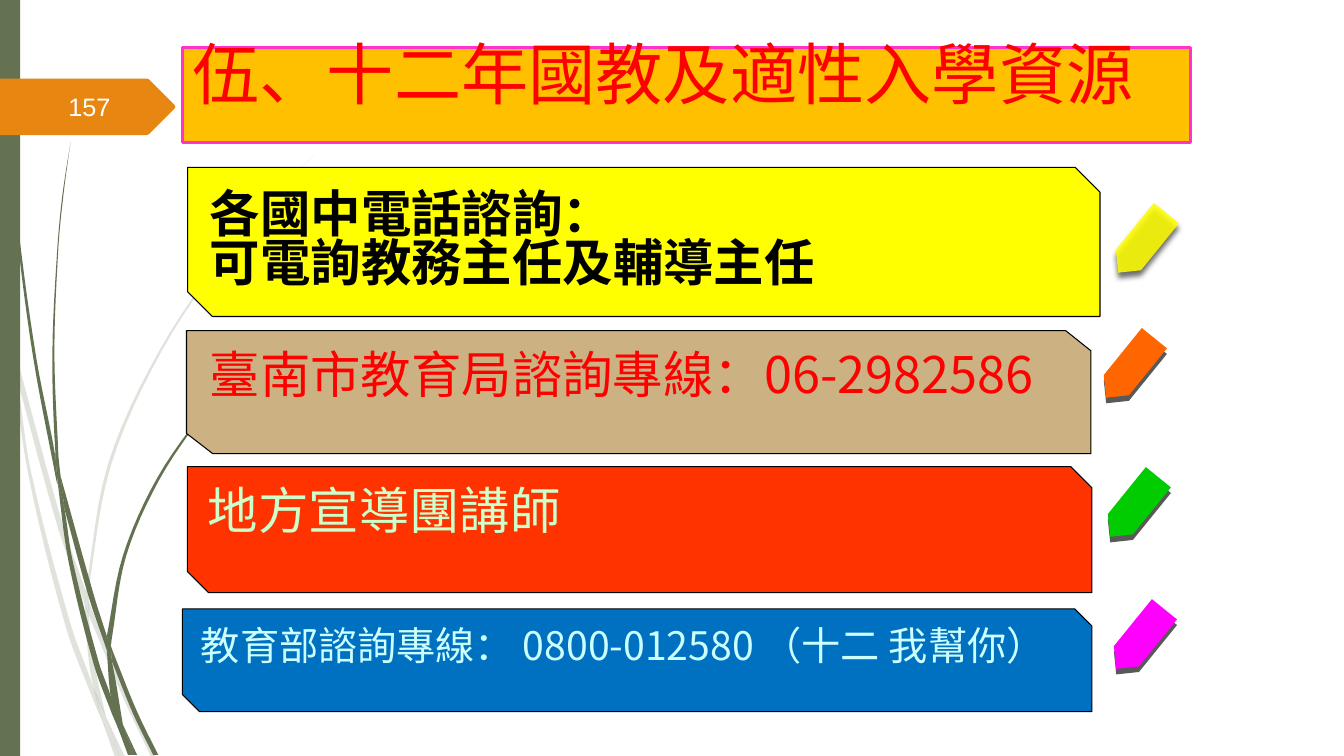
from dataclasses import dataclass
from math import dist

from lxml.etree import SubElement as Sub
from pptx import Presentation
from pptx.dml.color import RGBColor as Rgb
from pptx.enum.shapes import MSO_SHAPE as Kind
from pptx.enum.text import MSO_ANCHOR as Anchor, MSO_AUTO_SIZE as Auto, PP_ALIGN as Align
from pptx.oxml.ns import qn
from pptx.shapes.autoshape import Shape
from pptx.slide import Slide
from pptx.util import Inches, Pt

Point = tuple[float, float]
FONT = "Noto Sans CJK SC"
GREEN = "647252"
STEPS = 6


@dataclass
class Wisp:
    down: list[Point]
    up: list[Point]


@dataclass
class Bar:
    left: float
    top: float
    width: float
    height: float
    fill: str
    lines: list[str]
    color: str
    size: int = 36
    bold: bool = False


@dataclass
class Pen:
    left: float
    top: float
    fill: str
    alpha: int = 100
    blur: int = 0


PALE = [
    Wisp([(0, 2.82), (.08, 3.22), (.11, 3.5)], [(.1, 3.44), (0, 2.99)]),
    Wisp([(.14, 3.45), (.62, 5.2), (.85, 5.86)], [(.84, 5.99), (.57, 5.22), (.17, 3.76)]),
    Wisp([(.88, 5.96), (.92, 6.07), (1.27, 6.92), (1.55, 7.51)],
         [(1.5, 7.51), (1.23, 6.94), (.88, 6.1)]),
    Wisp([(1.05, 7.11), (1.24, 7.51)], [(1.19, 7.51)]),
    Wisp([(.11, 3.5), (.17, 3.76), (.31, 4.69), (.7, 6.19), (.93, 6.83), (1.01, 7.14)],
         [(1.01, 7.14), (.92, 6.93), (.65, 6.21), (.28, 4.7), (.11, 3.5)]),
    Wisp([(.84, 5.99), (.88, 6.1), (.91, 6.46), (1.05, 7.11)],
         [(1.05, 7.11), (.93, 6.83), (.87, 6.46), (.84, 5.99)]),
    Wisp([(3.12, 1.53), (2.68, 1.97), (2.28, 2.44), (1.58, 3.48), (1.07, 4.61), (.85, 5.86)],
         [(.88, 5.96), (.88, 5.84), (1.1, 4.62), (1.6, 3.49), (2.29, 2.45), (2.68, 1.98),
          (3.12, 1.53)]),
    Wisp([(1.01, 7.14), (1.14, 7.51)], [(1.19, 7.51)]),
    Wisp([(.85, 5.86), (.88, 5.96), (.88, 6.1)], [(.84, 5.99)]),
    Wisp([(.93, 6.83), (1.05, 7.11), (1.19, 7.51)], [(1.01, 7.14), (.99, 7.07), (.93, 6.83)]),
]
DARK = [
    Wisp([(.03, 0), (.05, .48), (.08, 1.09), (.19, 2.32), (.36, 3.55), (.55, 4.53), (.57, 4.81)],
         [(.56, 4.77), (.33, 3.55), (.17, 2.33), (.07, 1.1), (.03, .48), (.03, 0)]),
    Wisp([(.6, 4.72), (.93, 5.9), (1.06, 6.31)], [(1.06, 6.45), (.88, 5.92), (.64, 5.05)]),
    Wisp([(1.1, 6.41), (1.13, 6.49), (1.36, 7.06), (1.57, 7.49)],
         [(1.52, 7.49), (1.32, 7.08), (1.11, 6.56)]),
    Wisp([(.57, 4.77), (.64, 5.05), (.72, 5.56), (.98, 6.57), (1.1, 6.91), (1.17, 7.22)],
         [(1.11, 7.08), (.93, 6.59), (.68, 5.57), (.57, 4.77)]),
    Wisp([(.7, 1.41), (.62, 1.93), (.57, 2.45), (.52, 3.49), (.55, 4.49), (.6, 4.72)],
         [(.58, 4.53), (.54, 3.49), (.58, 2.45), (.63, 1.93), (.7, 1.41)]),
    Wisp([(1.22, 7.19), (1.36, 7.49)], [(1.33, 7.49)]),
    Wisp([(.55, 4.49), (.6, 4.72), (.64, 5.05)], [(.57, 4.77), (.55, 4.53)]),
    Wisp([(2.6, 3.44), (2.31, 3.73), (2.04, 4.05), (1.56, 4.74), (1.22, 5.51), (1.06, 6.31)],
         [(1.1, 6.41), (1.11, 6.33), (1.25, 5.52), (1.58, 4.76), (2.05, 4.06), (2.31, 3.74),
          (2.61, 3.44)]),
    Wisp([(1.17, 7.22), (1.31, 7.49)], [(1.27, 7.49)]),
    Wisp([(1.06, 6.45), (1.11, 6.56), (1.22, 7.19)], [(1.16, 7.06), (1.1, 6.92), (1.06, 6.45)]),
    Wisp([(1.06, 6.31), (1.1, 6.41), (1.11, 6.56)], [(1.06, 6.45)]),
    Wisp([(1.1, 6.91), (1.22, 7.19), (1.33, 7.49)], [(1.31, 7.49), (1.17, 7.22), (1.1, 6.91)]),
]
TAG = [(0, .78), (1.46, .78), (1.48, .79), (1.73, 1.04), (1.74, 1.06), (1.73, 1.08),
       (1.48, 1.33), (1.46, 1.34), (0, 1.34)]
TAN = [(1.85, 3.28), (10.57, 3.28), (10.82, 3.48), (10.82, 4.5), (2.11, 4.5), (1.85, 4.3)]
BARS = [
    Bar(1.81, 6.04, 9.02, 1.02, "0070C0", ["教育部諮詢專線： 0800-012580 （十二 我幫你）"], "CCFFFF", 28),
    Bar(1.86, 4.63, 8.97, 1.25, "FF3300", ["地方宣導團講師"], "CCFFCC"),
    Bar(1.86, 1.66, 9.05, 1.48, "FFFF00", ["各國中電話諮詢：", "可電詢教務主任及輔導主任"],
        "000000", bold=True),
]
LOCAL = Bar(1.85, 3.28, 8.98, 1.22, "CCB182", ["臺南市教育局諮詢專線：06-2982586"], "FF0000")
PENS = [Pen(10.95, 2.25, "FFFF00", 86, 4), Pen(10.87, 4.87, "00CC00"),
        Pen(10.93, 6.18, "FF00FF"), Pen(10.83, 3.49, "FF6600")]


def paint(shape: Shape, fill: str, line: str = "", width: float = .75, alpha: int = 100) -> None:
    shape.shadow.inherit = False
    shape.fill.solid()
    shape.fill.fore_color.rgb = Rgb.from_string(fill)
    if alpha < 100:
        tint = shape._element.spPr.find(qn("a:solidFill")).find(qn("a:srgbClr"))
        Sub(tint, qn("a:alpha"), val=str(alpha * 1000))
    if line:
        shape.line.color.rgb = Rgb.from_string(line)
        shape.line.width = Pt(width)
    else:
        shape.line.fill.background()


def write(shape: Shape, lines: list[str], size: int, color: str, face: str = FONT,
          bold: bool = False) -> None:
    frame = shape.text_frame
    frame.text = "\n".join(lines)
    frame.word_wrap = True
    frame.auto_size = Auto.NONE
    for para in frame.paragraphs:
        para.alignment = Align.LEFT
        for run in para.runs:
            run.font.size, run.font.bold, run.font.name = Pt(size), bold, face
            run.font.color.rgb = Rgb.from_string(color)
            Sub(run.font._element, qn("a:ea"), typeface=face)


def smooth(side: list[Point]) -> list[Point]:
    """Sample a Hermite curve that runs through the points of one side."""
    last = len(side) - 1
    slopes = []
    for i in range(last + 1):
        a, b, c = side[max(i - 1, 0)], side[i], side[min(i + 1, last)]
        span = dist(a, b) + dist(b, c) or 1
        slopes.append(((c[0] - a[0]) / span, (c[1] - a[1]) / span))
    out = [side[0]]
    for p, q, m, n in zip(side, side[1:], slopes, slopes[1:]):
        size = dist(p, q)
        for step in range(1, STEPS + 1):
            t = step / STEPS
            h = 3 * t**2 - 2 * t**3
            u, v = size * t * (1 - t)**2, size * t**2 * (t - 1)
            out.append(tuple(p[k] + h * (q[k] - p[k]) + u * m[k] + v * n[k] for k in (0, 1)))
    return out


def outline(slide: Slide, points: list[Point]) -> Shape:
    start, *rest = [(Inches(x), Inches(y)) for x, y in points]
    form = slide.shapes.build_freeform(*start)
    form.add_line_segments(rest)
    return form.convert_to_shape()


def add(slide: Slide, kind: Kind, *box: float) -> Shape:
    return slide.shapes.add_shape(kind, *map(Inches, box))


def label(shape: Shape, bar: Bar, left: float = .1, top: float = .13) -> None:
    paint(shape, bar.fill, "000000")
    write(shape, bar.lines, bar.size, bar.color, bold=bar.bold)
    frame = shape.text_frame
    frame.vertical_anchor = Anchor.TOP
    frame.margin_left, frame.margin_top = Inches(left), Inches(top)
    for para in frame.paragraphs:
        para.line_spacing = .81


def draw(slide: Slide, pen: Pen) -> None:
    shape = add(slide, Kind.PENTAGON, pen.left, pen.top, .76, .32)
    shape.rotation = 129
    paint(shape, pen.fill, alpha=pen.alpha)
    shade = Sub(shape._element.spPr.find(qn("a:effectLst")), qn("a:outerShdw"),
                blurRad=str(Pt(pen.blur)), dist=str(Pt(4)), dir="5400000", rotWithShape="0")
    Sub(shade, qn("a:srgbClr"), val="595959")


def main() -> None:
    deck = Presentation()
    deck.slide_width, deck.slide_height = Inches(13.33), Inches(7.5)
    slide = deck.slides.add_slide(deck.slide_layouts[5])
    for group, alpha in ((PALE, 20), (DARK, 100)):
        for wisp in group:
            paint(outline(slide, smooth(wisp.down) + smooth(wisp.up)), GREEN, alpha=alpha)
    paint(add(slide, Kind.RECTANGLE, 0, 0, .2, 7.5), GREEN)
    paint(outline(slide, TAG), "E78712")

    title = slide.shapes.title
    title.left, title.top, title.width, title.height = map(Inches, (1.81, .47, 10, .94))
    paint(title, "FFC000", "FF33CC", 2)
    write(title, ["伍、十二年國教及適性入學資源"], 48, "FF0000")
    title.text_frame.vertical_anchor = Anchor.MIDDLE
    title.text_frame.paragraphs[0].line_spacing = Pt(26)

    for bar in BARS:
        label(add(slide, Kind.SNIP_2_DIAG_RECTANGLE, bar.left, bar.top, bar.width, bar.height), bar)
    label(outline(slide, TAN), LOCAL, .23, .23)
    for pen in PENS:
        draw(slide, pen)

    number = slide.shapes.add_textbox(*map(Inches, (.58, .86, .85, .4)))
    write(number, ["157"], 18, "FFFFFF", "Arial")
    number.text_frame.vertical_anchor = Anchor.MIDDLE
    deck.save("out.pptx")


if __name__ == "__main__":
    main()
